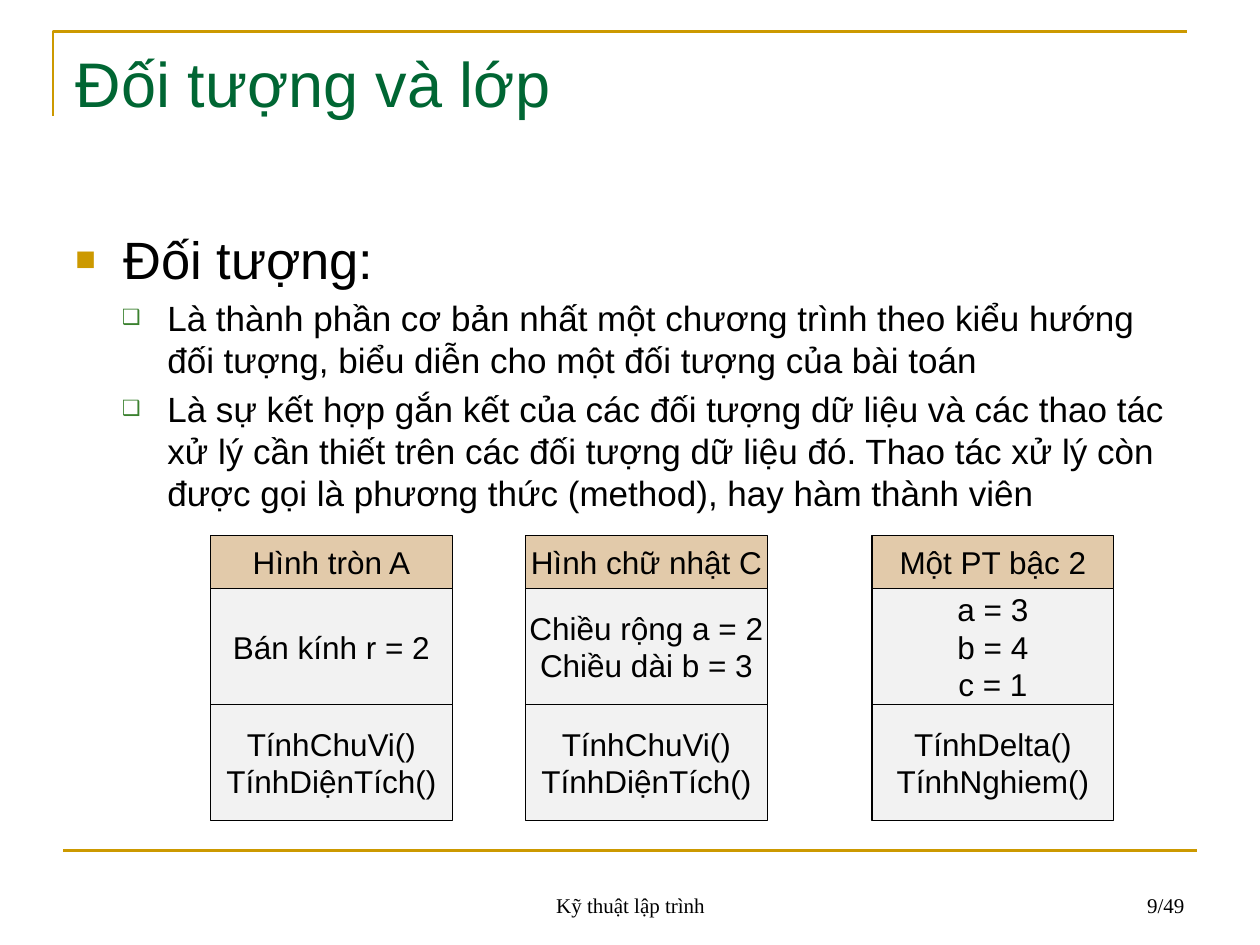
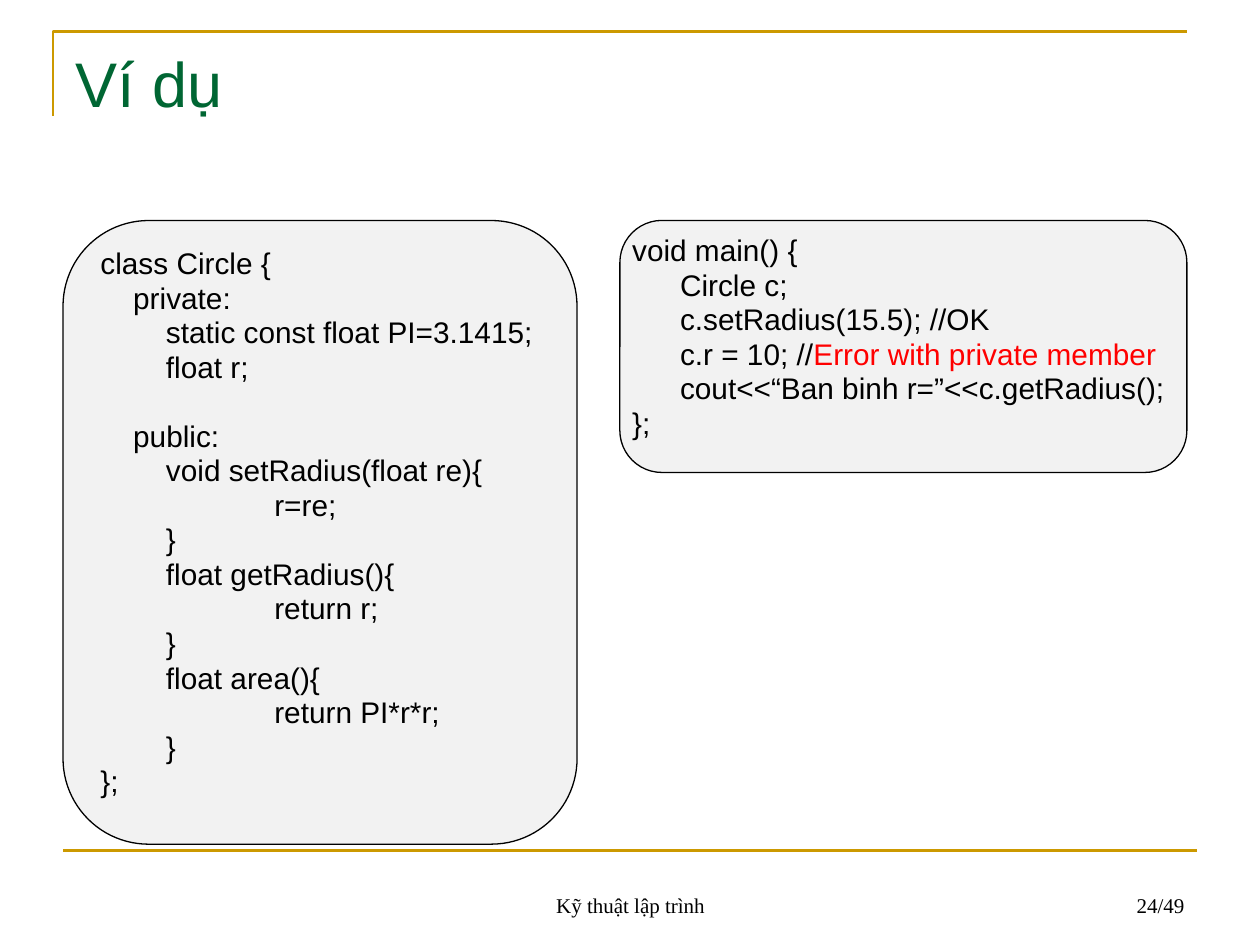
import pptx
import pptx.dml.color
import pptx.enum.shapes
import pptx.enum.text
import pptx.oxml
import pptx.oxml.ns
import pptx.util
from lxml import etree

Inches = pptx.util.Inches
Pt = pptx.util.Pt
Align = pptx.enum.text.PP_ALIGN
Anchor = pptx.enum.text.MSO_ANCHOR
Shape = pptx.enum.shapes.MSO_SHAPE

GOLD, GREEN, LEAF = "CC9900", "006633", "3B812F"
BLACK, RED, SAND, GREY = "000000", "FF0000", "E2CAAA", "F2F2F2"
SANS, SERIF = "Arial", "Times New Roman"
TITLE_ONLY = 5
CODE_SIZE = 17
BLANK_LINE = 19.8  # height of one line of code, in points


def color(hex_string):
    return pptx.dml.color.RGBColor.from_string(hex_string)


class Deck:
    """Holds the shared style and the slide being built."""

    def __init__(self):
        self.presentation = pptx.Presentation()
        self.presentation.slide_width = Inches(10)
        self.presentation.slide_height = Inches(7.5)
        self.slide = None

    def new_slide(self, title, number):
        layout = self.presentation.slide_layouts[TITLE_ONLY]
        self.slide = self.presentation.slides.add_slide(layout)
        self.frame_lines()
        self.footer(3.42, 3.17, "Kỹ thuật lập trình", Align.CENTER)
        self.footer(7.17, 2.33, f"{number}/49", Align.RIGHT)

        shape = self.slide.shapes.title
        shape.left, shape.top = Inches(0.5), Inches(0.3)
        shape.width, shape.height = Inches(9), Inches(1.25)
        text_frame = self.text_frame(shape, Anchor.TOP)
        paragraph = text_frame.paragraphs[0]
        paragraph.alignment = Align.LEFT
        self.run(paragraph, title, 36, GREEN)

    def frame_lines(self):
        builder = self.slide.shapes.build_freeform(Inches(0.42), Inches(0.92))
        corner = [(Inches(0.42), Inches(0.25)), (Inches(9.42), Inches(0.25))]
        builder.add_line_segments(corner, close=False)
        bracket = builder.convert_to_shape()
        bracket.shadow.inherit = False
        bracket.fill.background()

        rule = self.slide.shapes.add_connector(
            pptx.enum.shapes.MSO_CONNECTOR.STRAIGHT,
            Inches(0.5), Inches(6.75), Inches(9.5), Inches(6.75))
        etree.SubElement(rule._element.spPr, pptx.oxml.ns.qn("a:effectLst"))
        for shape in (bracket, rule):
            shape.line.color.rgb = color(GOLD)
            shape.line.width = Pt(1.5)

    def footer(self, left, width, text, alignment):
        text_frame = self.text_box(left, 6.83, width, 0.5, Anchor.BOTTOM)
        paragraph = text_frame.paragraphs[0]
        paragraph.alignment = alignment
        self.run(paragraph, text, 12, BLACK, SERIF)

    def text_box(self, left, top, width, height, anchor=Anchor.TOP):
        shape = self.slide.shapes.add_textbox(
            Inches(left), Inches(top), Inches(width), Inches(height))
        return self.text_frame(shape, anchor)

    def text_frame(self, shape, anchor, wrap=True):
        text_frame = shape.text_frame
        text_frame.word_wrap = wrap
        text_frame.auto_size = pptx.enum.text.MSO_AUTO_SIZE.NONE
        text_frame.vertical_anchor = anchor
        return text_frame

    def run(self, paragraph, text, size, hex_string=BLACK, font=SANS):
        run = paragraph.add_run()
        run.text = text
        run.font.size = Pt(size)
        run.font.name = font
        run.font.color.rgb = color(hex_string)

    def paragraphs(self, text_frame, count):
        """Return exactly count paragraphs of a fresh text frame."""
        for _ in range(count - 1):
            text_frame.add_paragraph()
        return text_frame.paragraphs

    def indent(self, paragraph, left, first=0):
        properties = paragraph._p.get_or_add_pPr()
        properties.set("marL", str(Inches(left)))
        properties.set("indent", str(Inches(first)))
        return properties

    def bullet(self, paragraph, left, first, mark, hex_string, percent):
        properties = self.indent(paragraph, left, first)
        namespace = pptx.oxml.ns.nsdecls("a")
        for xml in (
            f'<a:buClr {namespace}><a:srgbClr val="{hex_string}"/></a:buClr>',
            f'<a:buSzPct {namespace} val="{percent * 1000}"/>',
            f'<a:buFont {namespace} typeface="{SANS}"/>',
            f'<a:buChar {namespace} char="{mark}"/>',
        ):
            properties.append(pptx.oxml.parse_xml(xml))

    def bullets(self, items):
        styles = [(30, 0.38, -0.38, "■", GOLD, 65), (20, 0.73, -0.36, "❑", LEAF, 60)]
        text_frame = self.text_box(0.5, 1.75, 9, 4.95)
        for paragraph, (level, text) in zip(
                self.paragraphs(text_frame, len(items)), items):
            size, *bullet_style = styles[level]
            paragraph.level = level
            paragraph.space_before = Pt(size * 0.2)
            self.bullet(paragraph, *bullet_style)
            self.run(paragraph, text, size)

    def box(self, kind, left, top, width, height, fill):
        shape = self.slide.shapes.add_shape(
            kind, Inches(left), Inches(top), Inches(width), Inches(height))
        shape.shadow.inherit = False
        shape.fill.solid()
        shape.fill.fore_color.rgb = color(fill)
        shape.line.color.rgb = color(BLACK)
        shape.line.width = Pt(0.75)
        return shape

    def object_card(self, left, name, data, methods):
        top = 4.25
        for lines, height, fill in (
                ([name], 0.42, SAND), (data, 0.92, GREY), (methods, 0.92, GREY)):
            shape = self.box(Shape.RECTANGLE, left, top, 1.92, height, fill)
            text_frame = self.text_frame(shape, Anchor.MIDDLE, wrap=False)
            for paragraph, line in zip(
                    self.paragraphs(text_frame, len(lines)), lines):
                paragraph.alignment = Align.CENTER
                self.run(paragraph, line, 18)
            top += height

    def code_panel(self, left, width, height, lines, indents, side_inset=0.1):
        """Each line is its depth, its runs, and any blank lines above it."""
        shape = self.box(Shape.ROUNDED_RECTANGLE, left, 1.75, width, height, GREY)
        text_frame = self.text_frame(shape, Anchor.TOP)
        text_frame.margin_left = text_frame.margin_right = Inches(side_inset)
        for paragraph, (depth, text, *extra) in zip(
                self.paragraphs(text_frame, len(lines)), lines):
            blank_lines = extra[0] if extra else 0
            paragraph.alignment = Align.LEFT
            paragraph.line_spacing = 0.8
            paragraph.space_before = Pt(CODE_SIZE * 0.2 + blank_lines * BLANK_LINE)
            self.indent(paragraph, indents[depth])
            runs = [(text, BLACK)] if isinstance(text, str) else text
            for run_text, hex_string in runs:
                self.run(paragraph, run_text, CODE_SIZE, hex_string)


def build_objects_slide(deck):
    deck.new_slide("Đối tượng và lớp", 9)
    deck.bullets([
        (0, "Đối tượng:"),
        (1, "Là thành phần cơ bản nhất một chương trình theo kiểu hướng đối "
            "tượng, biểu diễn cho một đối tượng của bài toán"),
        (1, "Là sự kết hợp gắn kết của các đối tượng dữ liệu và các thao tác "
            "xử lý cần thiết trên các đối tượng dữ liệu đó. Thao tác xử lý còn "
            "được gọi là phương thức (method), hay hàm thành viên"),
    ])
    # Three example objects: name, data, methods
    shape_methods = ["TínhChuVi()", "TínhDiệnTích()"]
    deck.object_card(1.67, "Hình tròn A", ["Bán kính r = 2"], shape_methods)
    deck.object_card(4.17, "Hình chữ nhật C",
                     ["Chiều rộng a = 2", "Chiều dài b = 3"], shape_methods)
    deck.object_card(6.92, "Một PT bậc 2", ["a = 3", "b = 4", "c = 1"],
                     ["TínhDelta()", "TínhNghiem()"])


def build_example_slide(deck):
    deck.new_slide("Ví dụ", 24)
    # Class definition
    deck.code_panel(0.5, 4.08, 4.95, [
        (0, "class Circle {"),
        (1, "private:"),
        (2, "static const float PI=3.1415;"),
        (2, "float r;"),
        (1, "public:", 1),
        (2, "void setRadius(float re){"),
        (3, "r=re;"),
        (2, "}"),
        (2, "float getRadius(){"),
        (3, "return r;"),
        (2, "}"),
        (2, "float area(){"),
        (3, "return PI*r*r;"),
        (2, "}"),
        (0, "};"),
    ], indents=(0, 0.26, 0.52, 1.38))
    # Main program
    deck.code_panel(4.92, 4.5, 2, [
        (0, "void main() {"),
        (1, "Circle c;"),
        (1, "c.setRadius(15.5); //OK"),
        (1, [("c.r = 10; //", BLACK), ("Error with private member", RED)]),
        (1, "cout<<“Ban binh r=”<<c.getRadius();"),
        (0, "};"),
    ], indents=(0, 0.38), side_inset=0)


def main():
    deck = Deck()
    build_objects_slide(deck)
    build_example_slide(deck)
    deck.presentation.save("out.pptx")


if __name__ == "__main__":
    main()
